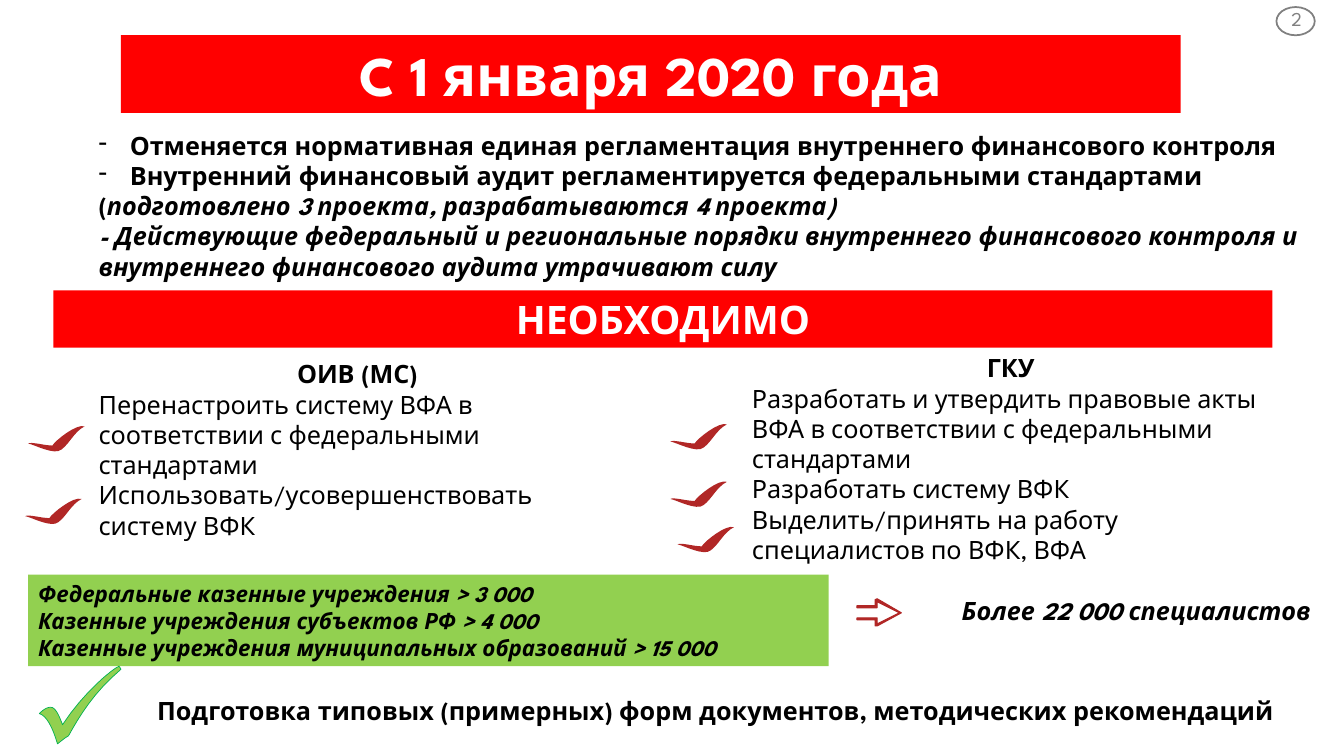
import dataclasses

import lxml.etree
import pptx
import pptx.dml.color
import pptx.enum.shapes
import pptx.enum.text
import pptx.oxml.ns
import pptx.util

Inches = pptx.util.Inches
LEFT = pptx.enum.text.PP_ALIGN.LEFT
CENTER = pptx.enum.text.PP_ALIGN.CENTER
SHAPES = pptx.enum.shapes.MSO_SHAPE


@dataclasses.dataclass(frozen=True)
class Theme:
    """Colours, font and type sizes of the slide."""
    font: str = "League Spartan"
    black: str = "000000"
    white: str = "FFFFFF"
    grey: str = "808080"
    banner: str = "FF0000"
    tick: str = "B12726"
    green: str = "92D050"
    green_edge: str = "00B050"
    title: int = 40
    heading: int = 28
    body: int = 18
    note: int = 16
    number: int = 14


THEME = Theme()

TICK_CURVES = [
    (0, 0.2),
    (0.06, 0.21, 0.26, 0.32, 0.33, 0.26),
    (0.41, 0.2, 0.46, 0.08, 0.56, 0.03),
    (0.48, 0, 0.27, 0.17, 0.24, 0.22),
    (0.16, 0.22, 0.03, 0.18, 0, 0.2),
]
TICK_PLACES = [(0.28, 4.2), (0.25, 4.92), (6.65, 4.18), (6.65, 4.75), (6.72, 5.2)]
BIG_TICK_CURVES = [
    (0, 0.47),
    (0.05, 0.42, 0.09, 0.4, 0.13, 0.41),
    (0.17, 0.43, 0.2, 0.5, 0.23, 0.58),
    (0.44, 0.26, 0.72, 0.03, 0.79, 0),
    (0.79, 0, 0.8, 0.01, 0.81, 0.03),
    (0.54, 0.26, 0.4, 0.49, 0.29, 0.69),
    (0.24, 0.72, 0.22, 0.74, 0.18, 0.77),
    (0.13, 0.6, 0.07, 0.49, 0, 0.47),
]
ARROW_POINTS = [
    (0, 0.07), (0.18, 0.07), (0.18, 0.01), (0.2, 0), (0.44, 0.14),
    (0.2, 0.27), (0.18, 0.27), (0.18, 0.21), (0, 0.21), (0, 0.19),
    (0.2, 0.19), (0.2, 0.25), (0.42, 0.14), (0.2, 0.03), (0.2, 0.09), (0, 0.09),
]


def colour(value):
    """Return an RGB colour."""
    return pptx.dml.color.RGBColor.from_string(value)


def paint(shape, fill=None, line=None, width=1):
    """Set the fill and outline of a shape and drop its shadow."""
    shape.shadow.inherit = False
    if fill:
        shape.fill.solid()
        shape.fill.fore_color.rgb = colour(fill)
    else:
        shape.fill.background()
    if line:
        shape.line.color.rgb = colour(line)
        shape.line.width = pptx.util.Pt(width)
    else:
        shape.line.fill.background()


def add_dash(paragraph):
    """Give a paragraph a hanging dash."""
    properties = paragraph._p.get_or_add_pPr()
    properties.set("marL", str(Inches(0.31)))
    properties.set("indent", str(-Inches(0.31)))
    tag = pptx.oxml.ns.qn("a:buChar")
    lxml.etree.SubElement(properties, tag).set("char", "-")


def write(shape, paragraphs, size, text_colour=THEME.black, wrap=True):
    """Fill a shape with (alignment, dashed, runs) paragraphs."""
    frame = shape.text_frame
    frame.word_wrap = wrap
    frame.auto_size = pptx.enum.text.MSO_AUTO_SIZE.SHAPE_TO_FIT_TEXT
    for index, (alignment, dashed, runs) in enumerate(paragraphs):
        paragraph = frame.add_paragraph() if index else frame.paragraphs[0]
        paragraph.alignment = alignment
        if dashed:
            add_dash(paragraph)
        for text, style in runs:
            run = paragraph.add_run()
            run.text = text
            run.font.name = THEME.font
            run.font.size = pptx.util.Pt(size)
            run.font.bold = "b" in style
            run.font.italic = "i" in style
            run.font.color.rgb = colour(text_colour)


def line_of(text, style="", alignment=LEFT, dashed=False):
    """Describe a paragraph made of one run."""
    return alignment, dashed, [(text, style)]


def add_text(slide, box, paragraphs, size=THEME.body, **options):
    """Add a text box."""
    shape = slide.shapes.add_textbox(*map(Inches, box))
    write(shape, paragraphs, size, **options)
    return shape


def add_panel(slide, box, fill, paragraphs, size, text_colour):
    """Add a filled rectangle with text."""
    shape = slide.shapes.add_shape(SHAPES.RECTANGLE, *map(Inches, box))
    paint(shape, fill)
    write(shape, paragraphs, size, text_colour)


def flatten(curves, steps=8):
    """Turn a start point and cubic curves into outline points."""
    points = [curves[0]]
    for curve in curves[1:]:
        start = points[-1]
        for step in range(1, steps + 1):
            t = step / steps
            weights = ((1 - t) ** 3, 3 * t * (1 - t) ** 2, 3 * t * t * (1 - t), t ** 3)
            points.append(tuple(
                sum(w * v for w, v in zip(weights, (start[axis], *curve[axis::2])))
                for axis in (0, 1)))
    return points


def add_outline(slide, left, top, points, fill, line=None, width=1):
    """Add a closed freeform placed at left, top."""
    placed = [(Inches(left + x), Inches(top + y)) for x, y in points]
    builder = slide.shapes.build_freeform(*placed[0])
    builder.add_line_segments(placed[1:], close=True)
    paint(builder.convert_to_shape(), fill, line, width)


def add_page_number(slide):
    """Add the slide number in its ring."""
    ring = slide.shapes.add_shape(SHAPES.OVAL, *map(Inches, (12.66, 0.07, 0.38, 0.28)))
    paint(ring, line=THEME.grey, width=1.25)
    number = add_text(slide, (12.65, 0.03, 0.42, 0.32), [line_of("2", alignment=CENTER)],
                      THEME.number, text_colour=THEME.grey, wrap=False)
    frame = number.text_frame
    frame.margin_left = frame.margin_right = Inches(0.09)
    frame.margin_top = frame.margin_bottom = Inches(0.04)


def main():
    """Build the slide and save it."""
    presentation = pptx.Presentation()
    presentation.slide_width, presentation.slide_height = Inches(13.33), Inches(7.5)
    slide = presentation.slides.add_slide(presentation.slide_layouts[6])
    add_page_number(slide)
    add_panel(slide, (1.2, 0.35, 10.51, 0.77), THEME.banner,
              [line_of("C 1 января 2020 года", "b", CENTER)], THEME.title, THEME.white)
    add_text(slide, (0.88, 1.24, 12.1, 1.62), [
        line_of("Отменяется нормативная единая регламентация внутреннего финансового контроля",
                "b", dashed=True),
        line_of("Внутренний финансовый аудит регламентируется федеральными стандартами",
                "b", dashed=True),
        (LEFT, False, [("(", "b"),
                       ("подготовлено 3 проекта, разрабатываются 4 проекта)", "bi")]),
        line_of("- Действующие федеральный и региональные порядки внутреннего финансового "
                "контроля и внутреннего финансового аудита утрачивают силу", "bi"),
    ])
    add_panel(slide, (0.53, 2.88, 12.09, 0.57), THEME.banner,
              [line_of("НЕОБХОДИМО", "b", CENTER)], THEME.heading, THEME.white)
    add_text(slide, (0.88, 3.51, 5.33, 1.92), [
        line_of("ОИВ (МС)", "b", CENTER),
        line_of("Перенастроить систему ВФА в соответствии с федеральными стандартами"),
        line_of("Использовать/усовершенствовать систему ВФК"),
    ])
    add_text(slide, (7.36, 3.45, 5.33, 2.22), [
        line_of("ГКУ", "b", CENTER),
        line_of("Разработать и утвердить правовые акты ВФА в соответствии с федеральными "
                "стандартами"),
        line_of("Разработать систему ВФК"),
        line_of("Выделить/принять на работу специалистов по ВФК, ВФА"),
    ])
    for left, top in TICK_PLACES:
        add_outline(slide, left, top, flatten(TICK_CURVES), THEME.tick)
    add_panel(slide, (0.28, 5.7, 7.94, 0.91), THEME.green, [
        line_of("Федеральные казенные учреждения > 3 000", "bi"),
        line_of("Казенные учреждения субъектов РФ > 4 000", "bi"),
        line_of("Казенные учреждения муниципальных образований > 15 000", "bi"),
    ], THEME.note, THEME.black)
    add_outline(slide, 8.5, 5.94, ARROW_POINTS, THEME.tick, THEME.tick, 0.75)
    add_text(slide, (9.44, 5.86, 3.7, 0.4),
             [line_of("Более 22 000 специалистов", "bi")], wrap=False)
    add_outline(slide, 0.39, 6.61, flatten(BIG_TICK_CURVES), THEME.green,
                THEME.green_edge, 0.5)
    add_text(slide, (1.46, 6.85, 11.77, 0.4), [
        line_of("Подготовка типовых (примерных) форм документов, методических рекомендаций",
                "b")])
    presentation.save("out.pptx")


if __name__ == "__main__":
    main()
